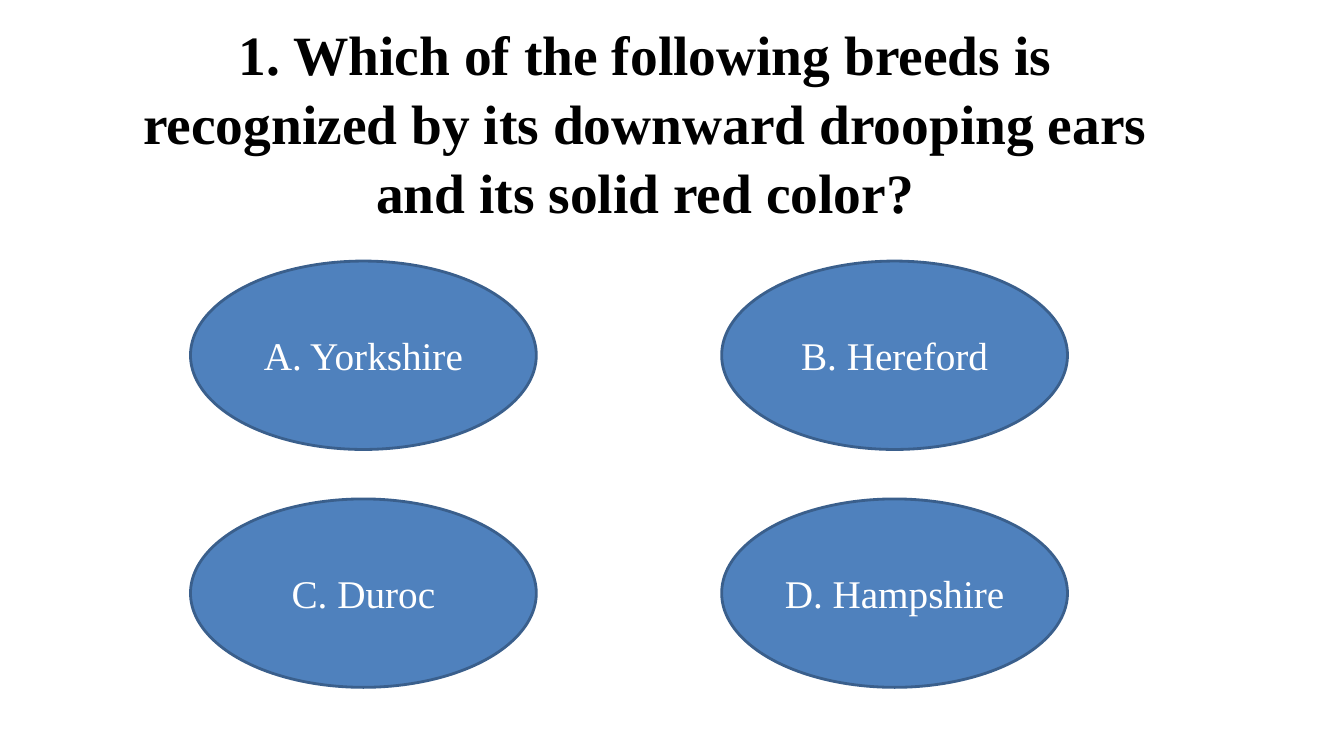
import pptx
import pptx.util
import pptx.dml.color
import pptx.enum.shapes
import pptx.enum.text

Pt = pptx.util.Pt
RGBColor = pptx.dml.color.RGBColor

BLACK = RGBColor(0x00, 0x00, 0x00)
WHITE = RGBColor(0xFF, 0xFF, 0xFF)
BLUE = RGBColor(0x4F, 0x81, 0xBD)
DARK_BLUE = RGBColor(0x3A, 0x5F, 0x8C)

QUESTION = ("1. Which of the following breeds is recognized by its "
            "downward drooping ears and its solid red color?")
ANSWERS = ["A. Yorkshire", "B. Hereford", "C. Duroc", "D. Hampshire"]


def write_text(frame, text, size, color, bold=False, spacing=1.0):
    frame.word_wrap = True
    frame.auto_size = pptx.enum.text.MSO_AUTO_SIZE.NONE
    frame.vertical_anchor = pptx.enum.text.MSO_ANCHOR.MIDDLE
    paragraph = frame.paragraphs[0]
    paragraph.alignment = pptx.enum.text.PP_ALIGN.CENTER
    paragraph.line_spacing = spacing
    run = paragraph.add_run()
    run.text = text
    run.font.name = "Times New Roman"
    run.font.size = Pt(size)
    run.font.bold = bold
    run.font.color.rgb = color


def place_question(slide, left, top, width, height):
    question = slide.shapes.title
    question.left, question.top = Pt(left), Pt(top)
    question.width, question.height = Pt(width), Pt(height)
    write_text(question.text_frame, QUESTION, 39.6, BLACK, bold=True, spacing=1.04)


def place_answers(slide, left, top, width, height):
    answer_width, answer_height = 247, 134.6
    column_step = width - answer_width
    row_step = height - answer_height
    for index, text in enumerate(ANSWERS):
        row, column = divmod(index, 2)
        answer = slide.shapes.add_shape(
            pptx.enum.shapes.MSO_SHAPE.OVAL,
            Pt(left + column * column_step), Pt(top + row * row_step),
            Pt(answer_width), Pt(answer_height))
        answer.shadow.inherit = False
        answer.fill.solid()
        answer.fill.fore_color.rgb = BLUE
        answer.line.color.rgb = DARK_BLUE
        answer.line.width = Pt(2)
        write_text(answer.text_frame, text, 28, WHITE)


def main():
    quiz = pptx.Presentation()
    quiz.slide_width, quiz.slide_height = Pt(960), Pt(540)
    slide = quiz.slides.add_slide(quiz.slide_layouts[5])
    place_question(slide, 82.8, 28, 756, 116.6)
    place_answers(slide, 136.1, 186.5, 626.4, 304.5)
    quiz.save("out.pptx")


if __name__ == "__main__":
    main()
